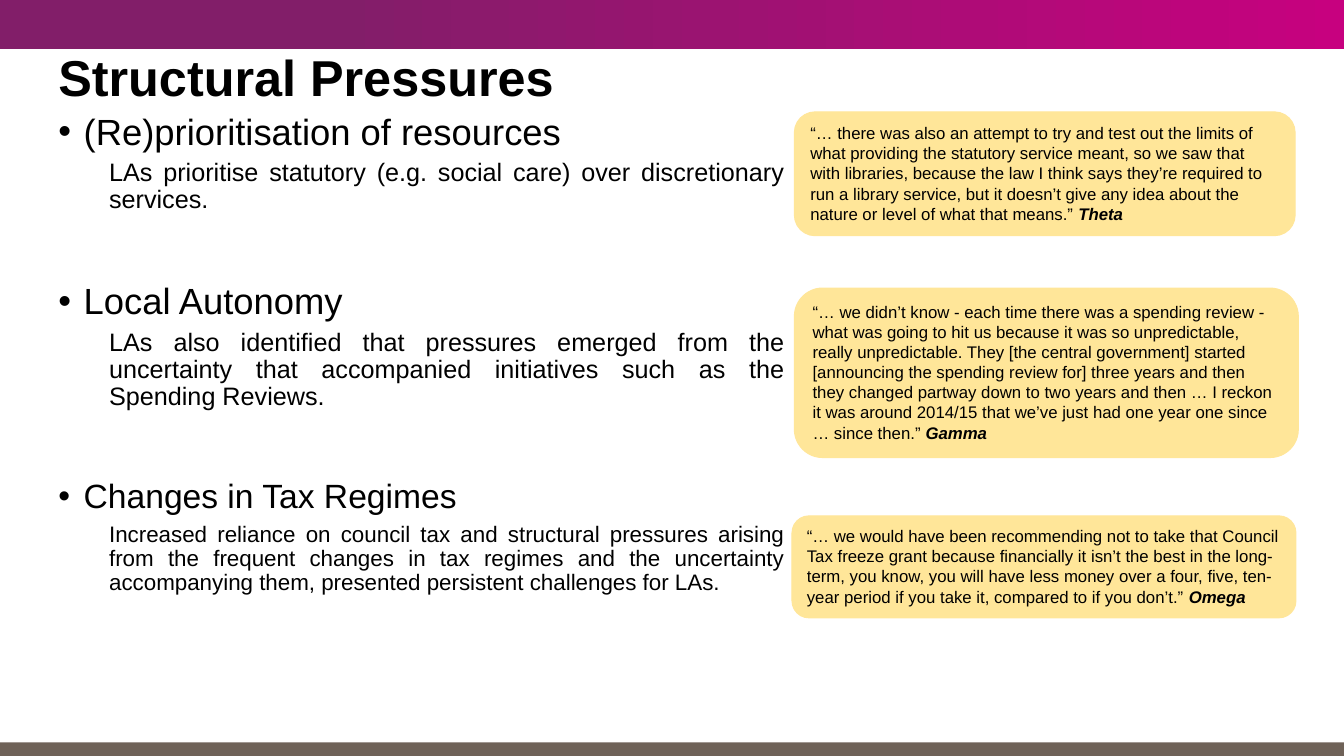
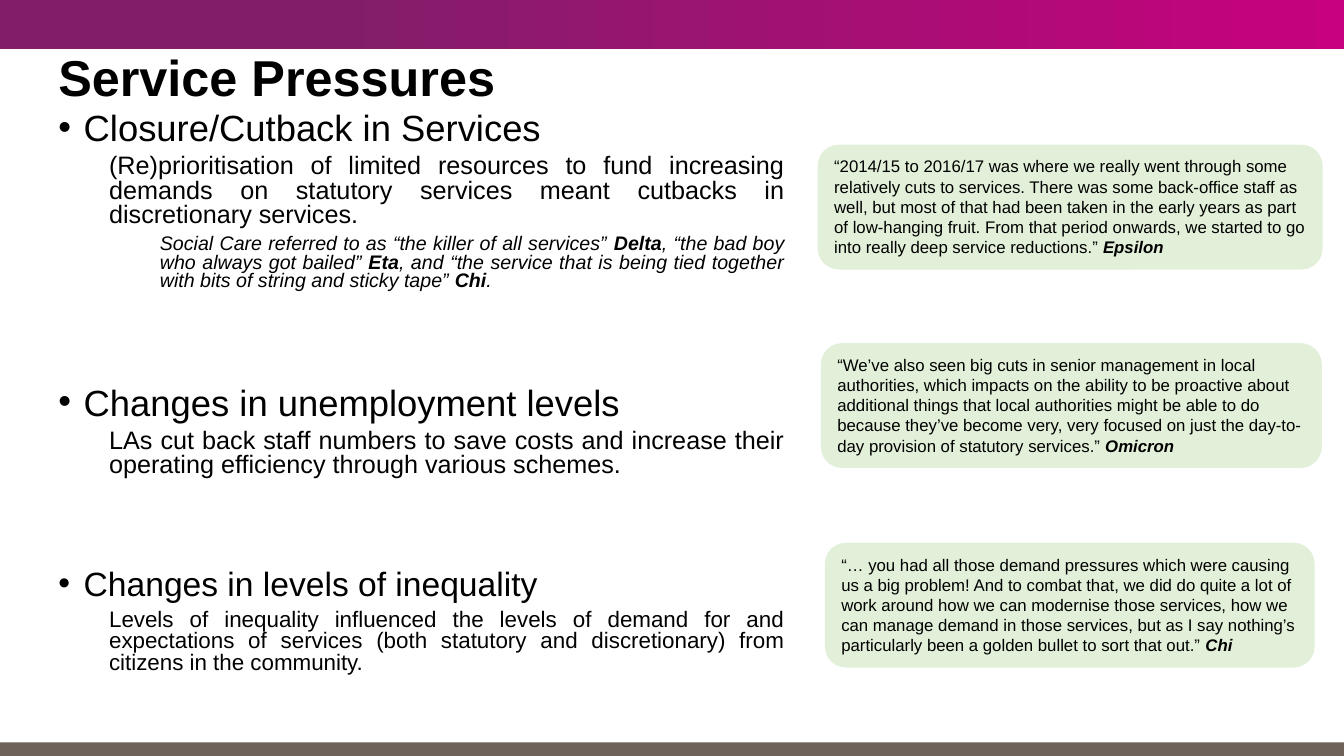
"""Build two slides on structural and service pressures, with interview quotes."""
from lxml import etree
from pptx import Presentation
from pptx import util as u
from pptx.dml import color
from pptx.enum import shapes, text
from pptx.oxml import ns

FONT = "Arial"
BLACK, FOOTER = "000000", "6F6258"
MAGENTA, PURPLE = "C7017F", "821E69"
YELLOW, GREEN = "FFE699", "E2F0D9"
WIDTH, HEIGHT = 33.87, 19.05
BAND_HEIGHT, FOOTER_HEIGHT = 1.23, 0.34
INDENT = 0.64
LEVEL_INDENTS = {0: INDENT, 1: 2 * INDENT, 2: 4 * INDENT}

SLIDES = [
    {
        "title": "Structural Pressures",
        "quote_fill": YELLOW,
        "line_spacing": 0.9,
        "body": [
            (0, 26, 0, "(Re)prioritisation of resources"),
            (1, 18, 5, "LAs prioritise statutory (e.g. social care) over discretionary services."),
            (0, 26, 49, "Local Autonomy"),
            (1, 18, 5, "LAs also identified that pressures emerged from the uncertainty that "
                       "accompanied initiatives such as the Spending Reviews."),
            (0, 24, 49, "Changes in Tax Regimes"),
            (1, 16, 5, "Increased reliance on council tax and structural pressures arising from "
                       "the frequent changes in tax regimes and the uncertainty accompanying "
                       "them, presented persistent challenges for LAs."),
        ],
        "quotes": [
            ((20.02, 2.82, 12.62, 3.12),
             "“… there was also an attempt to try and test out the limits of what providing the "
             "statutory service meant, so we saw that with libraries, because the law I think "
             "says they’re required to run a library service, but it doesn’t give any idea about "
             "the nature or level of what that means.” *Theta*"),
            ((20.02, 7.26, 12.7, 4.27),
             "“… we didn’t know - each time there was a spending review - what was going to hit "
             "us because it was so unpredictable, really unpredictable. They [the central "
             "government] started [announcing the spending review for] three years and then they "
             "changed partway down to two years and then … I reckon it was around 2014/15 that "
             "we’ve just had one year one since … since then.” *Gamma*"),
            ((19.96, 13, 12.7, 2.57),
             "“… we would have been recommending not to take that Council Tax freeze grant "
             "because financially it isn’t the best in the long-term, you know, you will have "
             "less money over a four, five, ten-year period if you take it, compared to if you "
             "don’t.” *Omega*"),
        ],
    },
    {
        "title": "Service Pressures",
        "quote_fill": GREEN,
        "line_spacing": 0.8,
        "body": [
            (0, 26, 0, "Closure/Cutback in Services"),
            (1, 18, 5, "(Re)prioritisation of limited resources to fund increasing demands on "
                       "statutory services meant cutbacks in discretionary services."),
            (2, 14, 5, "Social Care referred to as “the killer of all services” *Delta*, “the bad "
                       "boy who always got bailed” *Eta*, and “the service that is being tied "
                       "together with bits of string and sticky tape” *Chi*."),
            (0, 26, 69, "Changes in unemployment levels"),
            (1, 18, 5, "LAs cut back staff numbers to save costs and increase their operating "
                       "efficiency through various schemes."),
            (0, 24, 66, "Changes in levels of inequality"),
            (1, 16, 5, "Levels of inequality influenced the levels of demand for and expectations "
                       "of services (both statutory and discretionary) from citizens in the "
                       "community."),
        ],
        "quotes": [
            ((20.62, 3.66, 12.7, 3.12),
             "“2014/15 to 2016/17 was where we really went through some relatively cuts to "
             "services. There was some back-office staff as well, but most of that had been taken "
             "in the early years as part of low-hanging fruit. From that period onwards, we "
             "started to go into really deep service reductions.” *Epsilon*"),
            ((20.7, 8.66, 12.6, 3.12),
             "“We’ve also seen big cuts in senior management in local authorities, which impacts "
             "on the ability to be proactive about additional things that local authorities might "
             "be able to do because they’ve become very, very focused on just the day-to-day "
             "provision of statutory services.” *Omicron*"),
            ((20.8, 13.69, 12.32, 3.12),
             "“… you had all those demand pressures which were causing us a big problem! And to "
             "combat that, we did do quite a lot of work around how we can modernise those "
             "services, how we can manage demand in those services, but as I say nothing’s "
             "particularly been a golden bullet to sort that out.” *Chi*"),
        ],
    },
]


def rgb(value):
    """Turn a hex string into a colour."""
    return color.RGBColor.from_string(value)


def write(paragraph, marked, size, formats, strong):
    """Add runs to a paragraph, with the parts between asterisks in the strong format."""
    for index, part in enumerate(marked.split("*")):
        if not part:
            continue
        run = paragraph.add_run()
        run.text = part
        run.font.color.rgb = rgb(BLACK)
        values = {"name": FONT, "size": u.Pt(size), **formats, **(strong if index % 2 else {})}
        for name, value in values.items():
            setattr(run.font, name, value)


presentation = Presentation()
presentation.slide_width, presentation.slide_height = u.Cm(WIDTH), u.Cm(HEIGHT)
blank = presentation.slide_layouts[6]

for content in SLIDES:
    slide = presentation.slides.add_slide(blank)

    for top, height in [(0, BAND_HEIGHT), (HEIGHT - FOOTER_HEIGHT, FOOTER_HEIGHT)]:
        band = slide.shapes.add_shape(
            shapes.MSO_SHAPE.RECTANGLE, 0, u.Cm(top), u.Cm(WIDTH), u.Cm(height))
        band.shadow.inherit = False
        band.line.fill.background()
        if top:
            band.fill.solid()
            band.fill.fore_color.rgb = rgb(FOOTER)
        else:
            band.fill.gradient()
            band.fill.gradient_angle = 180
            stops = [(0, MAGENTA), (0.75, PURPLE)]
            for stop, (position, value) in zip(band.fill.gradient_stops, stops):
                stop.position = position
                stop.color.rgb = rgb(value)

    title = slide.shapes.add_textbox(u.Cm(1.22), u.Cm(0.81), u.Cm(31.39), u.Cm(2.41))
    title.text_frame.word_wrap = True
    title.text_frame.vertical_anchor = text.MSO_ANCHOR.MIDDLE
    paragraph = title.text_frame.paragraphs[0]
    paragraph.line_spacing = 0.9
    write(paragraph, content["title"], 36, {"bold": True}, {})

    body = slide.shapes.add_textbox(u.Cm(1.22), u.Cm(2.74), u.Cm(18.8), u.Cm(14.99))
    body.text_frame.word_wrap = True
    for index, (level, size, space, words) in enumerate(content["body"]):
        frame = body.text_frame
        paragraph = frame.add_paragraph() if index else frame.paragraphs[0]
        properties = paragraph._p.get_or_add_pPr()
        properties.set("marL", str(u.Cm(LEVEL_INDENTS[level])))
        properties.set("indent", str(0 if level else -u.Cm(INDENT)))
        if level == 0:
            etree.SubElement(properties, ns.qn("a:buFont")).set("typeface", FONT)
            etree.SubElement(properties, ns.qn("a:buChar")).set("char", "•")
        layout = {
            "level": level,
            "alignment": text.PP_ALIGN.JUSTIFY,
            "line_spacing": content["line_spacing"],
            "space_before": u.Pt(space),
        }
        for name, value in layout.items():
            setattr(paragraph, name, value)
        write(paragraph, words, size, {"italic": level == 2}, {"bold": True})

    for place, words in content["quotes"]:
        quote = slide.shapes.add_shape(
            shapes.MSO_SHAPE.ROUNDED_RECTANGLE, *[u.Cm(length) for length in place])
        quote.shadow.inherit = False
        quote.fill.solid()
        quote.fill.fore_color.rgb = rgb(content["quote_fill"])
        quote.line.color.rgb = rgb(content["quote_fill"])
        quote.line.width = u.Pt(0.75)
        quote.text_frame.word_wrap = True
        quote.text_frame.vertical_anchor = text.MSO_ANCHOR.TOP
        paragraph = quote.text_frame.paragraphs[0]
        paragraph.alignment = text.PP_ALIGN.LEFT
        write(paragraph, words, 12, {}, {"bold": True, "italic": True})

presentation.save("out.pptx")
